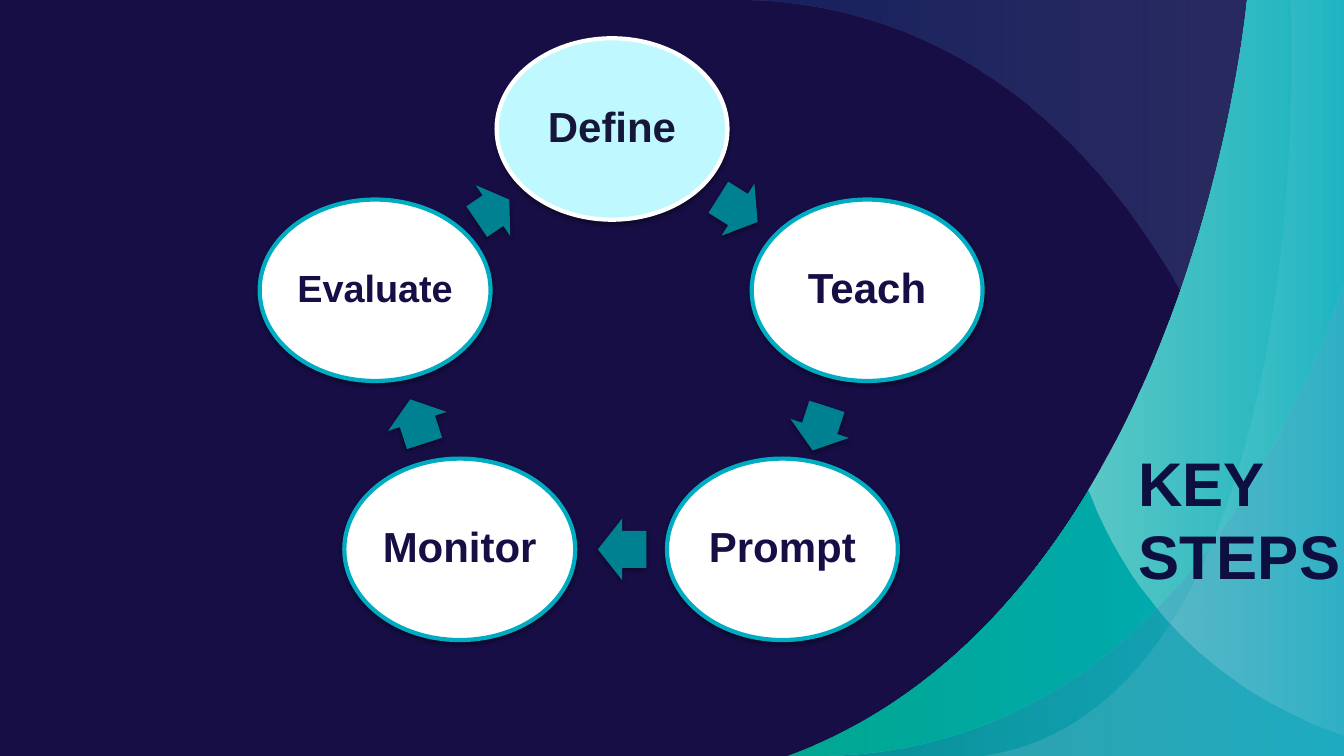
import pptx
import pptx.util
import pptx.dml.color
import pptx.enum.shapes
import pptx.enum.text
import pptx.oxml
import pptx.oxml.ns
import lxml.etree

Inches = pptx.util.Inches
Pt = pptx.util.Pt
MSO_SHAPE = pptx.enum.shapes.MSO_SHAPE
qn = pptx.oxml.ns.qn

WIDTH, HEIGHT = 13.33, 7.5
NAVY, TEAL, CYAN, WHITE = "160E44", "008192", "00ACC2", "FFFFFF"
EDGE = 14.23  # the ribbons bleed past the right side


def colour(code):
    return pptx.dml.color.RGBColor.from_string(code)


def add_centred(kind, centre_x, centre_y, width, height, fill):
    """Add a filled preset shape around a centre, with a soft shadow below."""
    shape = slide.shapes.add_shape(
        kind, Inches(centre_x - width / 2), Inches(centre_y - height / 2),
        Inches(width), Inches(height))
    shape.fill.solid()
    shape.fill.fore_color.rgb = colour(fill)
    shape.line.fill.background()
    shape.shadow.inherit = False
    effects = shape.element.spPr.find(qn("a:effectLst"))
    shadow = lxml.etree.SubElement(
        effects, qn("a:outerShdw"), blurRad=str(Pt(3.1)), dist=str(Pt(1.8)),
        dir="5400000", algn="ctr", rotWithShape="0")
    black = lxml.etree.SubElement(shadow, qn("a:srgbClr"), val="000000")
    lxml.etree.SubElement(black, qn("a:alpha"), val="35000")
    return shape


presentation = pptx.Presentation()
presentation.slide_width = Inches(WIDTH)
presentation.slide_height = Inches(HEIGHT)
slide = presentation.slides.add_slide(presentation.slide_layouts[5])
slide.background.fill.solid()
slide.background.fill.fore_color.rgb = colour(NAVY)

# Ribbons: start, curves (two handles and an end each), closing corners,
# then (colour, opacity in percent) from left to right
inner_start = (12.37, 0)
inner_edge = [(12.37, 0), (12.13, 2.65), (10.8, 4.86)]
outer_edge = [(10.12, 5.99), (9.16, 7.01), (7.81, HEIGHT)]
lower_edge = [(11.75, 7.34), (EDGE, HEIGHT), (EDGE, HEIGHT)]
right_side = [(EDGE, HEIGHT), (EDGE, 0)]
ribbons = [
    ((13.16, HEIGHT), [[(13.16, HEIGHT), (12.42, 0), (7.23, 0)]],
     [(13.41, 0), (13.41, HEIGHT)], [("114CA0", 29), ("8AAFDC", 18)]),
    ((7.81, HEIGHT), [[(11.82, 6.04), (12.63, 0), (12.63, 0)]],
     right_side[::-1], [("12102F", 54)]),
    (inner_start, [inner_edge, outer_edge],
     right_side, [("00A791", 100), (CYAN, 100)]),
    (inner_start, [inner_edge, lower_edge],
     right_side[1:], [(WHITE, 36), (WHITE, 0)]),
    ((12.8, 0), [[(12.8, 0), (13.14, 6.99), (9.74, HEIGHT)]],
     right_side, [(WHITE, 18), (WHITE, 0)]),
    ((13.98, 0), [[(13.98, 0), (13.24, HEIGHT), (8.05, HEIGHT)]],
     right_side, [("114CA0", 29), ("8AAFDC", 18)]),
]
for start, curves, corners, shades in ribbons:
    nodes = sum(curves, []) + corners
    builder = slide.shapes.build_freeform(Inches(start[0]), Inches(start[1]))
    builder.add_line_segments([(Inches(x), Inches(y)) for x, y in nodes], close=True)
    ribbon = builder.convert_to_shape()

    # Join every three nodes of the curved edges into one Bezier segment
    segments = list(ribbon.element.spPr.iter(qn("a:lnTo")))
    for first in range(0, 3 * len(curves), 3):
        bezier = pptx.oxml.parse_xml(
            '<a:cubicBezTo %s/>' % pptx.oxml.ns.nsdecls("a"))
        segments[first].addprevious(bezier)
        for segment in segments[first:first + 3]:
            bezier.append(segment[0])
            segment.getparent().remove(segment)

    ribbon.shadow.inherit = False
    ribbon.line.fill.background()
    if len(shades) == 1:
        ribbon.fill.solid()
        ribbon.fill.fore_color.rgb = colour(shades[0][0])
    else:
        ribbon.fill.gradient()
        ribbon.fill.gradient_angle = 0
        for stop, (code, opacity) in zip(ribbon.fill.gradient_stops, shades):
            stop.color.rgb = colour(code)
    for element, (code, opacity) in zip(ribbon.element.spPr.iter(qn("a:srgbClr")), shades):
        lxml.etree.SubElement(element, qn("a:alpha"), val=str(opacity * 1000))

# Cycle: pairs of ovals mirrored about one axis, on three rows
AXIS = 6.16
TOP, MIDDLE, BOTTOM = 1.28, 2.88, 5.45
ovals = [
    ("Define", -0.09, TOP, "C0F8FF", WHITE, "15163A", 30),
    ("Teach", 2.44, MIDDLE, WHITE, CYAN, NAVY, 30),
    ("Prompt", 1.6, BOTTOM, WHITE, CYAN, NAVY, 30),
    ("Monitor", -1.6, BOTTOM, WHITE, CYAN, NAVY, 30),
    ("Evaluate", -2.44, MIDDLE, WHITE, CYAN, NAVY, 27),
]
for label, offset, row, fill, border, ink, size in ovals:
    oval = add_centred(MSO_SHAPE.OVAL, AXIS + offset, row, 2.29, 1.8, fill)
    oval.line.color.rgb = colour(border)
    oval.line.width = Pt(3)
    frame = oval.text_frame
    frame.word_wrap = False
    frame.margin_left = frame.margin_right = Inches(0.04)
    frame.margin_top = frame.margin_bottom = Inches(0.04)
    frame.vertical_anchor = pptx.enum.text.MSO_ANCHOR.MIDDLE
    frame.text = label
    paragraph = frame.paragraphs[0]
    paragraph.alignment = pptx.enum.text.PP_ALIGN.CENTER
    paragraph.line_spacing = 0.9
    font = paragraph.runs[0].font
    font.name, font.size, font.bold = "Arial", Pt(size), True
    font.color.rgb = colour(ink)

# Arrows between the ovals, clockwise: centre, length, rotation
arrows = [
    (7.32, 2.08, 0.46, 32.2),
    (8.13, 4.25, 0.46, 108),
    (6.17, BOTTOM, 0.48, 180),
    (4.14, 4.18, 0.46, 252),
    (4.89, 2.09, 0.39, 325.9),
]
for centre_x, centre_y, length, angle in arrows:
    arrow = add_centred(MSO_SHAPE.RIGHT_ARROW, centre_x, centre_y, length, 0.61, TEAL)
    arrow.adjustments[0], arrow.adjustments[1] = 0.6, 0.5
    arrow.rotation = angle

# Title, brought in front of the ribbons
title = slide.shapes.title
title.left, title.top = Inches(11.19), Inches(4.36)
title.width, title.height = Inches(2.46), Inches(1.58)
title.element.getparent().append(title.element)
frame = title.text_frame
frame.word_wrap = True
frame.auto_size = pptx.enum.text.MSO_AUTO_SIZE.NONE
frame.vertical_anchor = pptx.enum.text.MSO_ANCHOR.TOP
frame.text = "KEY STEPS"
paragraph = frame.paragraphs[0]
paragraph.alignment = pptx.enum.text.PP_ALIGN.LEFT
paragraph.line_spacing = 1.0
font = paragraph.runs[0].font
font.name, font.size, font.bold = "Arial", Pt(44), True
font.color.rgb = colour("0D0F41")

presentation.save("out.pptx")
